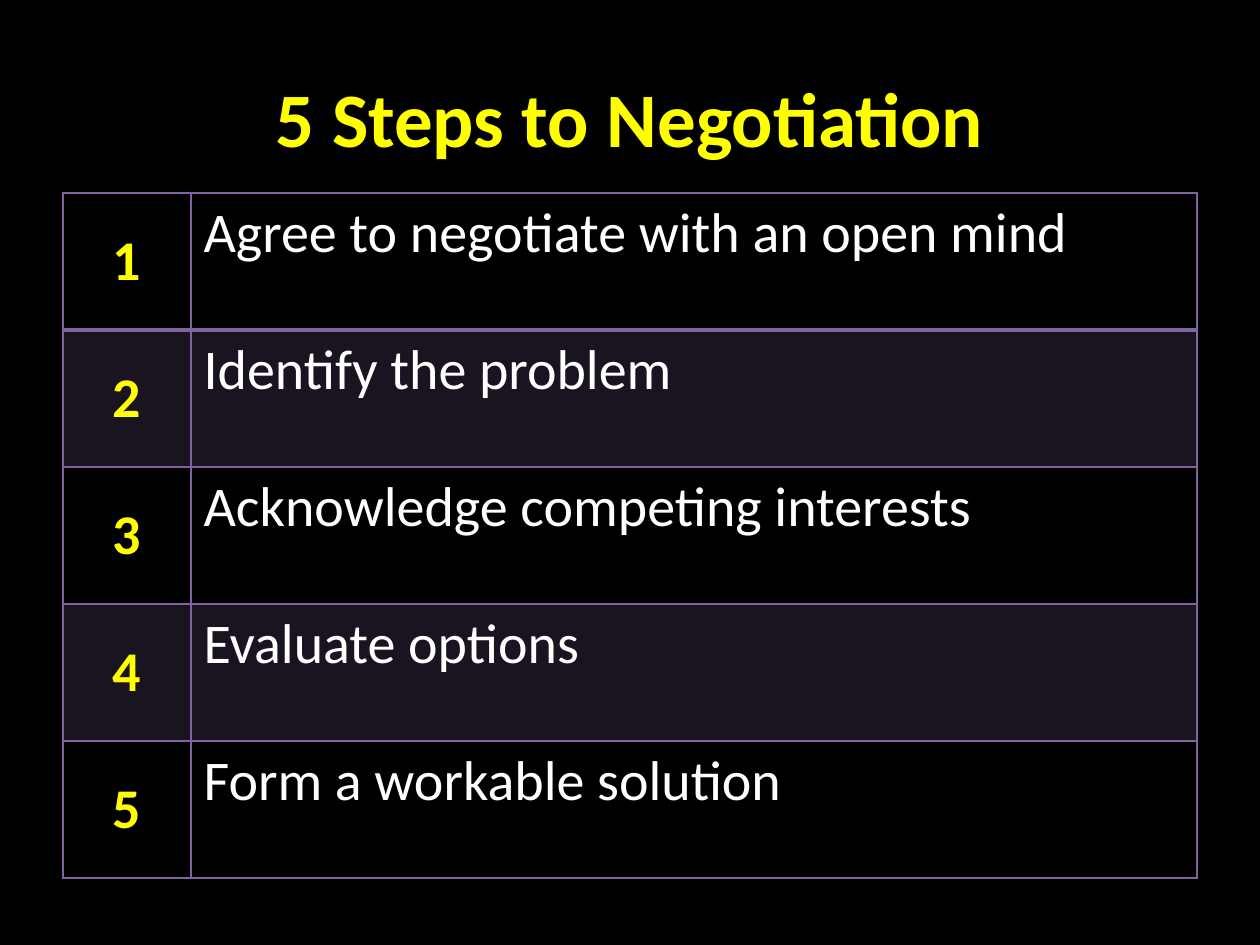
from lxml import etree
from pptx import Presentation, util as u
from pptx.dml.color import RGBColor
from pptx.enum import text as t
from pptx.oxml.ns import qn

# Content
TITLE = "5 Steps to Negotiation"
STEPS = [
    "Agree to negotiate with an open mind",
    "Identify the problem",
    "Acknowledge competing interests",
    "Evaluate options",
    "Form a workable solution",
]
HUES = {"back": "000000", "key": "FFFF00", "body": "FFFFFF", "line": "8064A2"}
FONT = "Calibri"

# Layout in px, 126 to the inch
PX = u.Inches(1) / 126
LEFT, WIDE = 63, 1134
TOP, ROW = 193, 137
COLS = [128, WIDE - 128]


def px(n):
    return u.Emu(round(n * PX))


def rgb(name):
    return RGBColor.from_string(HUES[name])


def write(frame, words, size, hue, bold=False, center=False):
    para = frame.paragraphs[0]
    para.alignment = t.PP_ALIGN.CENTER if center else t.PP_ALIGN.LEFT
    run = para.add_run()
    run.text = words
    font = run.font
    font.name, font.size, font.bold = FONT, u.Pt(size), bold
    font.color.rgb = rgb(hue)


def edge(cell, side, width):
    line = etree.SubElement(cell._tc.get_or_add_tcPr(), qn("a:ln" + side),
                            w=str(u.Pt(width)))
    fill = etree.SubElement(line, qn("a:solidFill"))
    etree.SubElement(fill, qn("a:srgbClr"), val=HUES["line"])


def tint(cell, percent):
    cell.fill.solid()
    cell.fill.fore_color.rgb = rgb("line")
    color = cell._tc.tcPr.find(qn("a:solidFill")).find(qn("a:srgbClr"))
    etree.SubElement(color, qn("a:alpha"), val=str(percent * 1000))


deck = Presentation()
deck.slide_width, deck.slide_height = u.Inches(10), u.Inches(7.5)
slide = deck.slides.add_slide(deck.slide_layouts[6])
slide.background.fill.solid()
slide.background.fill.fore_color.rgb = rgb("back")

# Title
frame = slide.shapes.add_textbox(px(LEFT), px(38), px(WIDE), px(158)).text_frame
frame.word_wrap = True
frame.vertical_anchor = t.MSO_ANCHOR.MIDDLE
write(frame, TITLE, 44, "key", bold=True, center=True)

# Table of steps: a number and a text in each row
table = slide.shapes.add_table(len(STEPS), 2, px(LEFT), px(TOP), px(WIDE),
                               px(ROW * len(STEPS))).table
for col, width in zip(table.columns, COLS):
    col.width = px(width)
for i, step in enumerate(STEPS):
    table.rows[i].height = px(ROW)
    num, body = table.rows[i].cells
    num.vertical_anchor = t.MSO_ANCHOR.MIDDLE
    write(num.text_frame, str(i + 1), 32, "key", bold=True, center=True)
    write(body.text_frame, step, 32, "body")
    for cell in (num, body):
        for side in "LRTB":
            # The rule under the first row is heavier
            heavy = (i, side) in ((0, "B"), (1, "T"))
            edge(cell, side, 2 if heavy else 1)
        if i % 2:
            tint(cell, 20)
        else:
            cell.fill.background()

deck.save("out.pptx")
